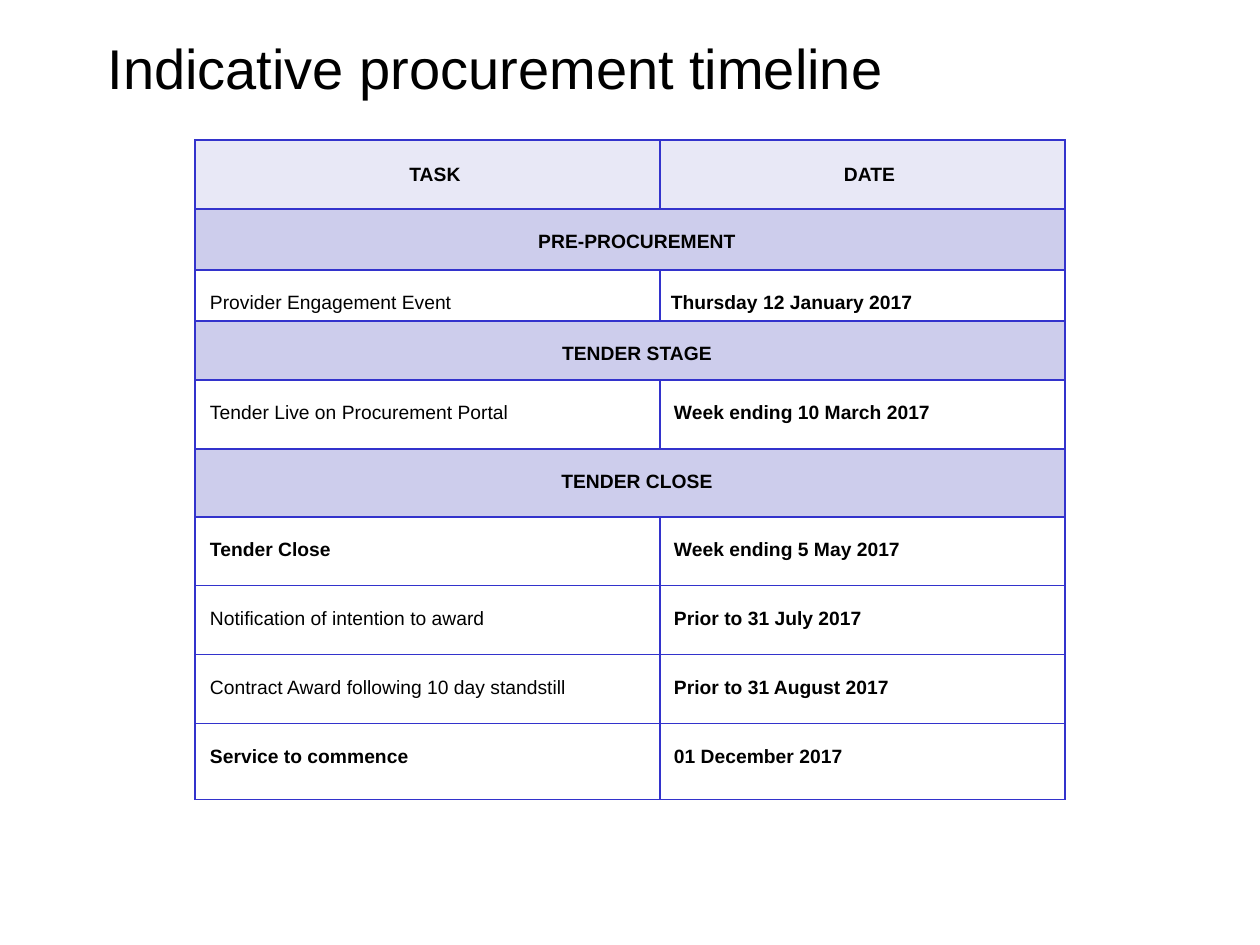
import pptx
import pptx.util
import pptx.dml.color
import pptx.enum.text
import pptx.oxml
import pptx.oxml.ns

PIXELS_PER_INCH = 126
FONT = "Arial"
BLACK = pptx.dml.color.RGBColor(0x00, 0x00, 0x00)
BORDER = pptx.dml.color.RGBColor(0x33, 0x33, 0xCC)
HEADER_FILL = pptx.dml.color.RGBColor(0xE8, 0xE8, 0xF6)
STAGE_FILL = pptx.dml.color.RGBColor(0xCD, 0xCD, 0xEC)
ALIGN = pptx.enum.text.PP_ALIGN
ANCHOR = pptx.enum.text.MSO_ANCHOR

COLUMN_WIDTHS = [465, 405]
TASK_INSET = 15
DATE_INSET = 14
TOP_INSET = 22
TIMELINE = [
    ("header", 69, "TASK", "DATE"),
    ("stage", 61, "PRE-PROCUREMENT", ""),
    ("task", 51, "Provider Engagement Event", "Thursday 12 January 2017"),
    ("stage", 59, "TENDER STAGE", ""),
    ("task", 69, "Tender Live on Procurement Portal", "Week ending 10 March 2017"),
    ("stage", 68, "TENDER CLOSE", ""),
    ("milestone", 69, "Tender Close", "Week ending 5 May 2017"),
    ("task", 69, "Notification of intention to award", "Prior to 31 July 2017"),
    ("task", 69, "Contract Award following 10 day standstill", "Prior to 31 August 2017"),
    ("milestone", 76, "Service to commence", "01 December 2017"),
]


def px(length):
    return pptx.util.Emu(round(length * 914400 / PIXELS_PER_INCH))


def format_text(text_frame, size, bold, alignment):
    for paragraph in text_frame.paragraphs:
        paragraph.alignment = alignment
        for run in paragraph.runs:
            run.font.name = FONT
            run.font.size = pptx.util.Pt(size)
            run.font.bold = bold
            run.font.color.rgb = BLACK


def add_borders(cell):
    properties = cell._tc.get_or_add_tcPr()
    for position, side in enumerate(("lnL", "lnR", "lnT", "lnB")):
        line = pptx.oxml.parse_xml(
            f'<a:{side} {pptx.oxml.ns.nsdecls("a")} w="{pptx.util.Pt(1)}">'
            f'<a:solidFill><a:srgbClr val="{BORDER}"/></a:solidFill></a:{side}>'
        )
        properties.insert(position, line)


def format_cell(cell, text, kind, is_date):
    cell.text_frame.text = text
    centred = kind in ("header", "stage")
    bold = is_date or kind != "task"
    format_text(cell.text_frame, 11, bold, ALIGN.CENTER if centred else ALIGN.LEFT)
    cell.margin_left = px(DATE_INSET if is_date or kind == "stage" else TASK_INSET)
    cell.margin_top = px(0 if kind == "header" else TOP_INSET)
    cell.margin_right = cell.margin_bottom = 0
    cell.vertical_anchor = ANCHOR.MIDDLE if kind == "header" else ANCHOR.TOP
    if centred:
        cell.fill.solid()
        cell.fill.fore_color.rgb = HEADER_FILL if kind == "header" else STAGE_FILL
    else:
        cell.fill.background()
    add_borders(cell)


def add_title(slide, left, top, width, height):
    title = slide.shapes.title
    title.left, title.top, title.width, title.height = map(px, (left, top, width, height))
    text_frame = title.text_frame
    text_frame.text = "Indicative procurement timeline"
    text_frame.vertical_anchor = ANCHOR.MIDDLE
    format_text(text_frame, 32, False, ALIGN.LEFT)


def add_timeline(slide, left, top, width, height):
    frame = slide.shapes.add_table(
        len(TIMELINE), len(COLUMN_WIDTHS), *map(px, (left, top, width, height))
    )
    table = frame.table
    table.first_row = False
    table.horz_banding = False
    for column, share in zip(table.columns, COLUMN_WIDTHS):
        column.width = px(width * share / sum(COLUMN_WIDTHS))
    total_height = sum(entry[1] for entry in TIMELINE)
    for index, (kind, row_height, task, date) in enumerate(TIMELINE):
        table.rows[index].height = px(height * row_height / total_height)
        task_cell, date_cell = table.cell(index, 0), table.cell(index, 1)
        format_cell(task_cell, task, kind, False)
        format_cell(date_cell, date, kind, True)
        if kind == "stage":
            task_cell.merge(date_cell)
    table.cell(2, 1).margin_left = px(11)


def main():
    presentation = pptx.Presentation()
    presentation.slide_width = px(1260)
    presentation.slide_height = px(945)
    slide = presentation.slides.add_slide(presentation.slide_layouts[5])
    add_title(slide, 95, 25, 1071, 84)
    add_timeline(slide, 195, 140, 870, 660)
    presentation.save("out.pptx")


if __name__ == "__main__":
    main()
